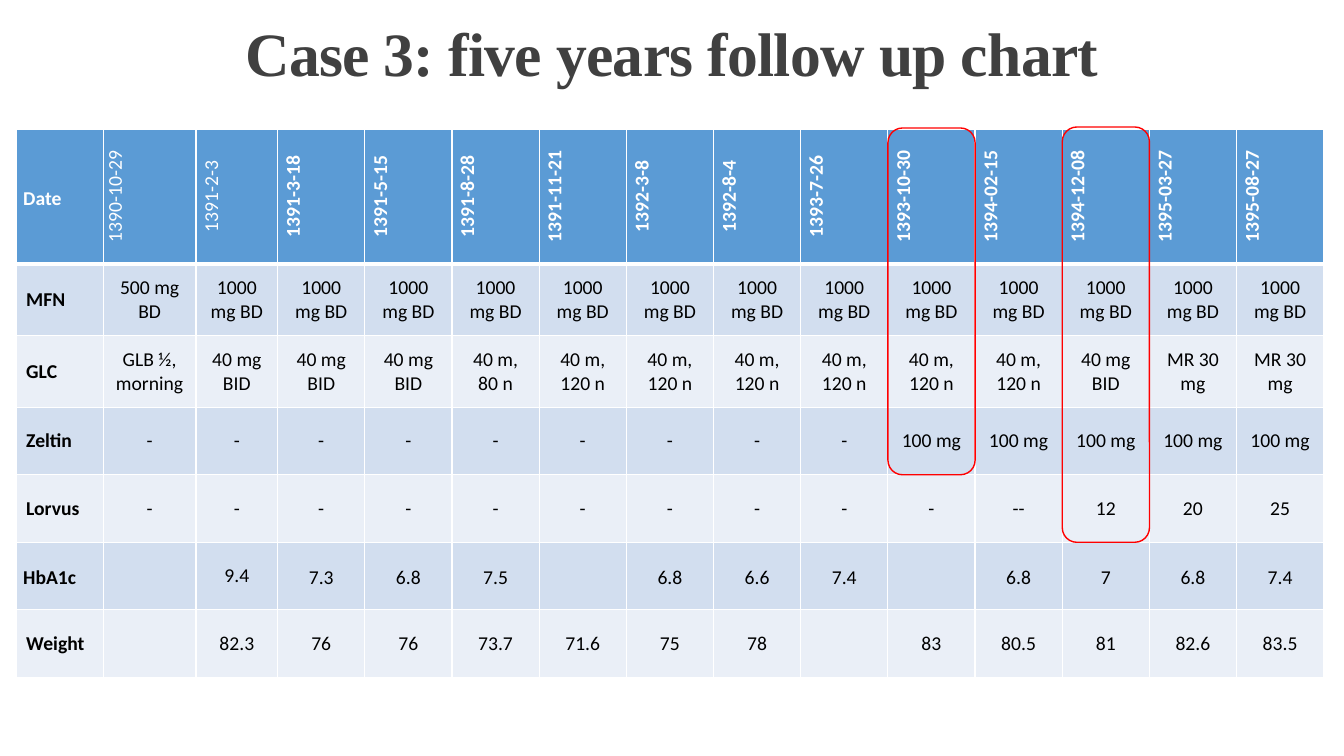
"""Builds the five-year follow-up slide: a treatment table with two marked visits."""
import pptx
import pptx.util
import pptx.dml.color
import pptx.enum.shapes
import pptx.enum.text
import pptx.oxml
import pptx.oxml.ns

TITLE = "Case 3: five years follow up chart"
DATES = ["1390-10-29", "1391-2-3", "1391-3-18", "1391-5-15", "1391-8-28",
         "1391-11-21", "1392-3-8", "1392-8-4", "1393-7-26", "1393-10-30",
         "1394-02-15", "1394-12-08", "1395-03-27", "1395-08-27"]
ROWS = [
    ["Date"] + DATES,
    ["MFN", "500 mg BD"] + ["1000 mg BD"] * 13,
    ["GLC", "GLB ½, morning"] + ["40 mg BID"] * 3 + ["40 m, 80 n"]
    + ["40 m, 120 n"] * 6 + ["40 mg BID"] + ["MR 30 mg"] * 2,
    ["Zeltin"] + ["-"] * 9 + ["100 mg"] * 5,
    ["Lorvus"] + ["-"] * 10 + ["--", "12", "20", "25"],
    ["HbA1c", "", "9.4", "7.3", "6.8", "7.5", "", "6.8", "6.6", "7.4", "",
     "6.8", "7", "6.8", "7.4"],
    ["Weight", "", "82.3", "76", "76", "73.7", "71.6", "75", "78", "", "83",
     "80.5", "81", "82.6", "83.5"],
]
MARKS = [("1393-10-30", "Zeltin", 0.01), ("1394-12-08", "Lorvus", 0.02)]
HUES = {"head": "5B9BD5", "odd": "D2DEEF", "even": "EAEFF7", "white": "FFFFFF",
        "ink": "000000", "title": "404040", "mark": "FF0000"}
WIDE, HIGH = 13.33, 7.5
LEFT, TOP, SPAN = 0.16, 1.28, 12.97
FIRST, NEXT = 0.92, 0.81
STEP = (SPAN - FIRST - NEXT) / (len(DATES) - 1)
COLS = [STEP, FIRST, NEXT] + [STEP] * (len(DATES) - 2)
TALL = [1.34] + [0.71] * 2 + [0.67] * 4
TIGHT = ("Date", "HbA1c")

Inch, Pt = pptx.util.Inches, pptx.util.Pt
Align = pptx.enum.text.PP_ALIGN
MID = pptx.enum.text.MSO_ANCHOR.MIDDLE


def hue(name):
    return pptx.dml.color.RGBColor.from_string(HUES[name])


def write(para, text, face, size, bold, tint):
    run = para.add_run()
    run.text = text
    font = run.font
    font.name, font.size, font.bold = face, Pt(size), bold
    font.color.rgb = hue(tint)
    return run


def edge(cell, row):
    props = cell._tc.get_or_add_tcPr()
    for spot, side in enumerate("LRTB"):
        wide = Pt(3 if row == 0 and side == "B" else 1)
        props.insert(spot, pptx.oxml.parse_xml(
            f'<a:ln{side} {pptx.oxml.ns.nsdecls("a")} w="{wide}"><a:solidFill>'
            f'<a:srgbClr val="{HUES["white"]}"/></a:solidFill></a:ln{side}>'))


def fill(cell, row, col, text):
    head, tight = row == 0, ROWS[row][0] in TIGHT
    cell.fill.solid()
    cell.fill.fore_color.rgb = hue("head" if head else "odd" if row % 2 else "even")
    edge(cell, row)
    cell.vertical_anchor = MID
    if tight:
        cell.margin_left = cell.margin_right = Inch(0.07)
        cell.margin_top = cell.margin_bottom = 0
    if head and col:
        cell._tc.get_or_add_tcPr().set("vert", "vert270")
    if not text:
        return
    para = cell.text_frame.paragraphs[0]
    para.alignment = Align.CENTER if col else Align.LEFT
    if tight and text not in ("1390-10-29", "9.4"):
        para.line_spacing = 1.15
    bold = col == 0 or (head and col > 2)
    write(para, text, "Calibri", 14, bold, "white" if head else "ink")


def add_grid(slide):
    grid = slide.shapes.add_table(len(ROWS), len(COLS), Inch(LEFT), Inch(TOP),
                                  Inch(SPAN), Inch(sum(TALL))).table
    for col, size in zip(grid.columns, COLS):
        col.width = Inch(size)
    for row, size in zip(grid.rows, TALL):
        row.height = Inch(size)
    for row, line in enumerate(ROWS):
        for col, text in enumerate(line):
            fill(grid.cell(row, col), row, col, text)


def add_mark(slide, date, drug, rise):
    col = ROWS[0].index(date)
    last = [line[0] for line in ROWS].index(drug)
    box = slide.shapes.add_shape(
        pptx.enum.shapes.MSO_SHAPE.ROUNDED_RECTANGLE,
        Inch(LEFT + sum(COLS[:col])), Inch(TOP - rise),
        Inch(COLS[col]), Inch(sum(TALL[:last + 1]) + rise))
    box.shadow.inherit = False
    box.fill.background()
    box.line.color.rgb = hue("mark")
    box.line.width = Pt(1)


def add_title(slide):
    title = slide.shapes.title
    title.left, title.top = 0, Inch(0.08)
    title.width, title.height = Inch(WIDE), Inch(0.98)
    frame = title.text_frame
    frame.auto_size = pptx.enum.text.MSO_AUTO_SIZE.NONE
    frame.word_wrap = True
    frame.vertical_anchor = MID
    para = frame.paragraphs[0]
    para.alignment = Align.CENTER
    para.line_spacing = 0.85
    run = write(para, TITLE, "Times New Roman", 44, True, "title")
    run._r.get_or_add_rPr().set("spc", "-50")


def main():
    deck = pptx.Presentation()
    deck.slide_width, deck.slide_height = Inch(WIDE), Inch(HIGH)
    slide = deck.slides.add_slide(deck.slide_layouts[5])
    add_grid(slide)
    add_title(slide)
    for mark in MARKS:
        add_mark(slide, *mark)
    deck.save("out.pptx")


if __name__ == "__main__":
    main()
